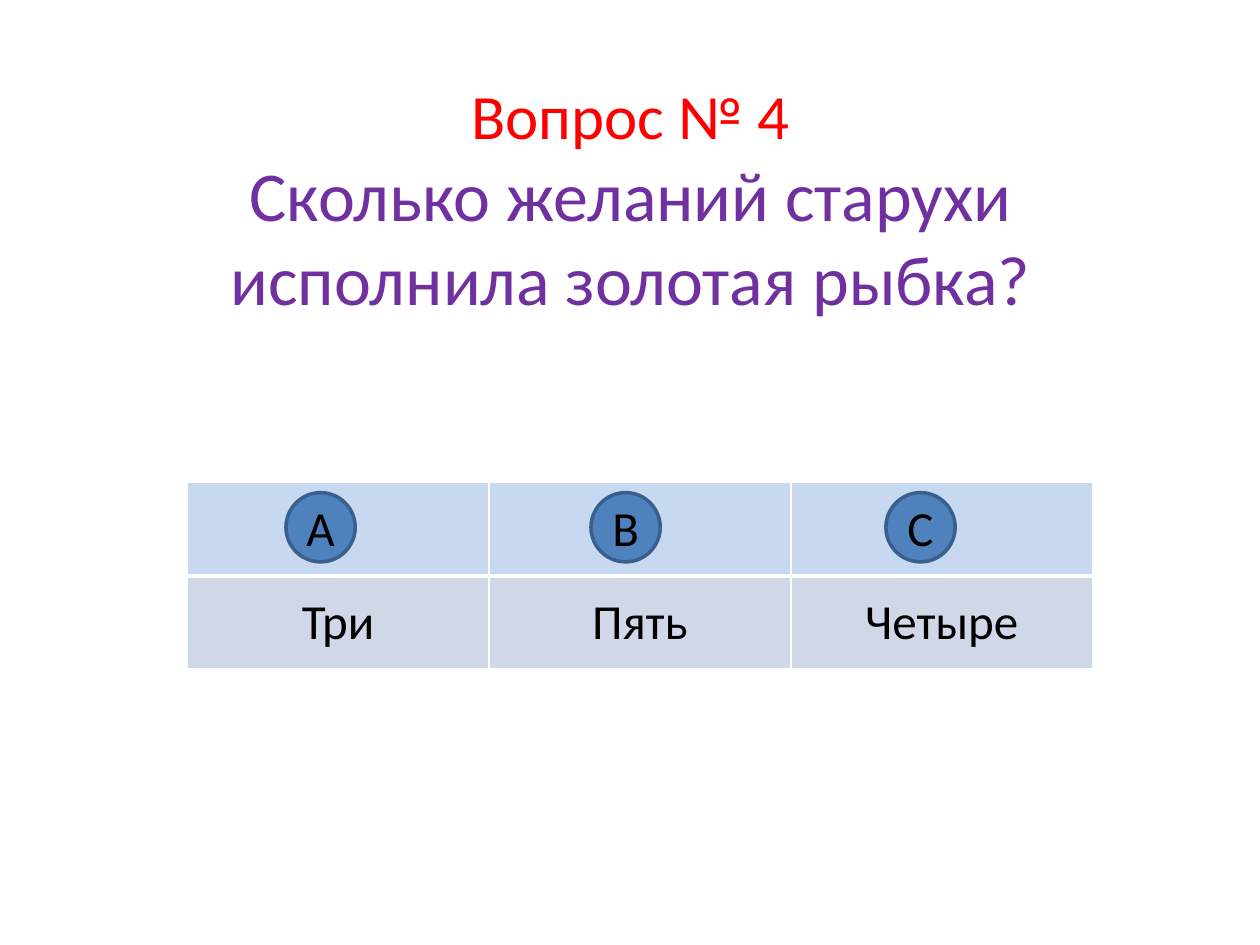
from lxml import etree
from pptx import Presentation
from pptx.dml.color import RGBColor
from pptx.enum import shapes, text
from pptx.oxml.ns import qn
from pptx.util import Pt

ANSWERS = ["Три", "Пять", "Четыре"]
BADGES = [("А", 163.4), ("В", 337.7), ("С", 506.2)]


def color(code):
    return RGBColor.from_string(code)


def style(para, size, code):
    para.alignment = text.PP_ALIGN.CENTER
    for run in para.runs:
        run.font.name = "Calibri"
        run.font.size = Pt(size)
        run.font.bold = False
        run.font.color.rgb = color(code)


def paint(item, code):
    item.fill.solid()
    item.fill.fore_color.rgb = color(code)


def add_title(slide):
    title = slide.shapes.title
    title.left, title.top = Pt(101.5), Pt(21.6)
    title.width, title.height = Pt(517.7), Pt(231.8)
    paint(title, "FFFFFF")
    frame = title.text_frame
    frame.text = "Вопрос № 4\nСколько желаний старухи исполнила золотая рыбка?"
    frame.word_wrap = True
    frame.auto_size = text.MSO_AUTO_SIZE.NONE
    frame.vertical_anchor = text.MSO_ANCHOR.MIDDLE
    frame.margin_bottom = Pt(52.4)
    style(frame.paragraphs[0], 36, "FF0000")
    style(frame.paragraphs[1], 40, "7030A0")


def add_edges(cell, widths):
    """Draw white borders; widths maps each side (L, R, T, B) to points."""
    props = cell._tc.get_or_add_tcPr()
    for side, width in widths.items():
        line = etree.SubElement(props, qn(f"a:ln{side}"), w=str(Pt(width)))
        fill = etree.SubElement(line, qn("a:solidFill"))
        etree.SubElement(fill, qn("a:srgbClr"), val="FFFFFF")


def add_table(slide):
    frame = slide.shapes.add_table(2, len(ANSWERS), Pt(106.9), Pt(275.8),
                                   Pt(517.5), Pt(106.6))
    table = frame.table
    table.first_row = table.horz_banding = False
    for col, answer in enumerate(ANSWERS):
        head, body = table.cell(0, col), table.cell(1, col)
        add_edges(head, {"L": 1, "R": 1, "T": 1, "B": 3})
        add_edges(body, {"L": 1, "R": 1, "T": 3, "B": 1})
        paint(head, "C6D9F1")
        paint(body, "D0D8E8")
        body.text = answer
        body.vertical_anchor = text.MSO_ANCHOR.MIDDLE
        style(body.text_frame.paragraphs[0], 28, "000000")


def add_badge(slide, letter, left):
    badge = slide.shapes.add_shape(shapes.MSO_SHAPE.OVAL, Pt(left), Pt(281.5),
                                   Pt(39.6), Pt(39.6))
    badge.shadow.inherit = False
    paint(badge, "4F81BD")
    badge.line.color.rgb = color("3A5F8C")
    badge.line.width = Pt(2)
    frame = badge.text_frame
    frame.text = letter
    frame.margin_left = frame.margin_right = 0
    frame.vertical_anchor = text.MSO_ANCHOR.MIDDLE
    style(frame.paragraphs[0], 28, "000000")


def main():
    deck = Presentation()
    deck.slide_width, deck.slide_height = Pt(720), Pt(540)
    slide = deck.slides.add_slide(deck.slide_layouts[5])
    add_title(slide)
    add_table(slide)
    for letter, left in BADGES:
        add_badge(slide, letter, left)
    deck.save("out.pptx")


if __name__ == "__main__":
    main()
